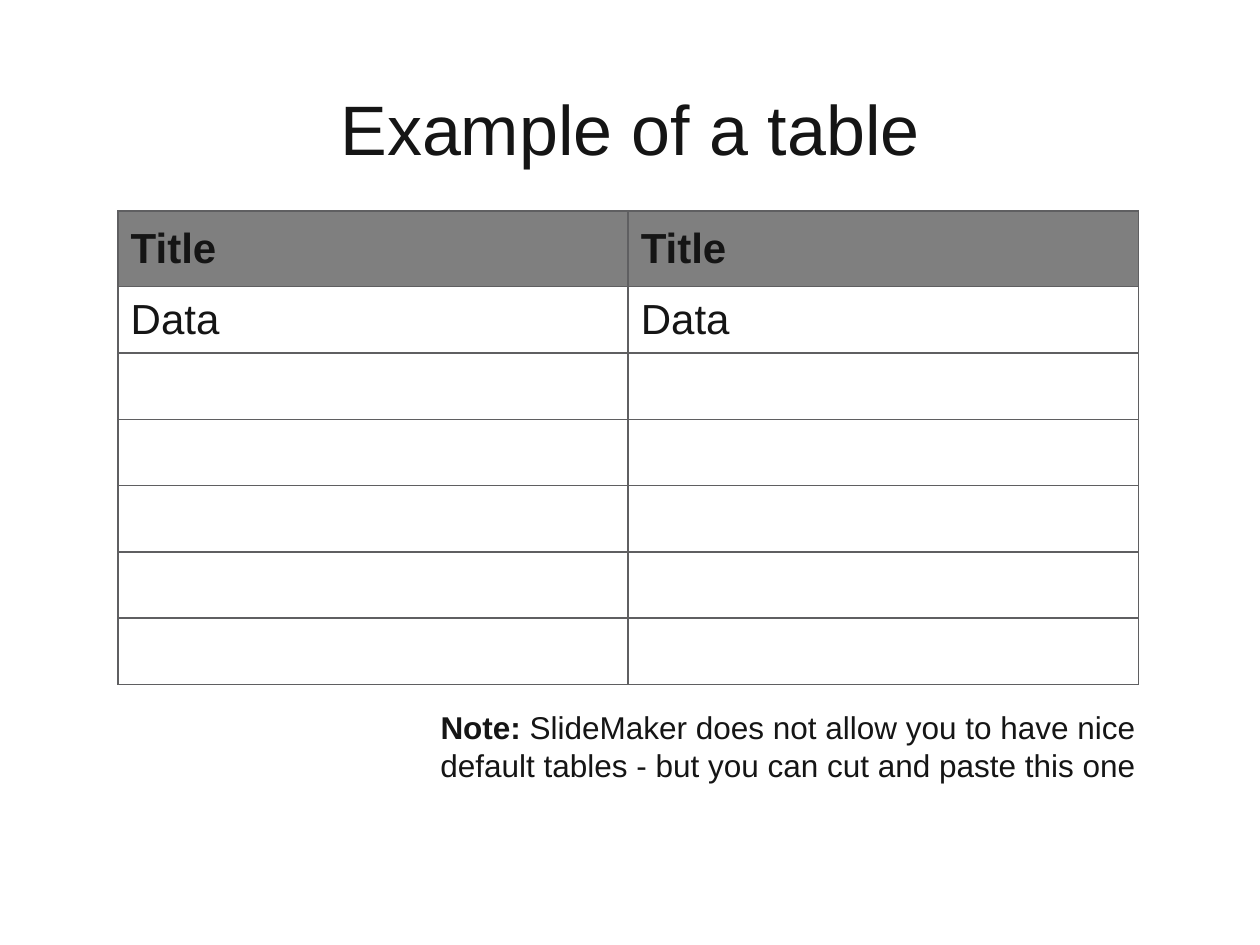
from dataclasses import dataclass

from lxml import etree
from pptx import Presentation
from pptx.dml.color import RGBColor
from pptx.enum import text as t
from pptx.oxml import ns
from pptx.util import Pt


@dataclass(frozen=True)
class Theme:
    font: str = "Arial"
    ink: str = "151515"
    header_fill: str = "7F7F7F"
    border: str = "5F5F61"
    border_width: float = 1
    title_size: float = 40
    table_size: float = 24
    note_size: float = 18


@dataclass(frozen=True)
class Box:
    left: float
    top: float
    width: float
    height: float

    def lengths(self) -> tuple:
        return Pt(self.left), Pt(self.top), Pt(self.width), Pt(self.height)


@dataclass(frozen=True)
class TableRow:
    labels: tuple
    height: float = 37.9
    header: bool = False


THEME = Theme()
TITLE_BOX = Box(36, 28, 648, 90)
TABLE_BOX = Box(67.5, 120.5, 583, 270.7)
NOTE_BOX = Box(196.5, 401, 459.5, 51)
COLUMN_COUNT = 2
EMPTY_ROW_COUNT = 5
ROWS = [
    TableRow(("Title", "Title"), height=43.3, header=True),
    TableRow(("Data", "Data")),
    *[TableRow(("", ""))] * EMPTY_ROW_COUNT,
]


def write(paragraph, wording: str, *, size: float, bold: bool = False, align=None) -> None:
    """Append a formatted run to the paragraph."""
    if align is not None:
        paragraph.alignment = align
    run = paragraph.add_run()
    run.text = wording
    run.font.name = THEME.font
    run.font.size = Pt(size)
    run.font.bold = bold
    run.font.color.rgb = RGBColor.from_string(THEME.ink)


def add_borders(cell) -> None:
    """Put the four side lines ahead of the fill, as the schema requires."""
    properties = cell._tc.get_or_add_tcPr()
    for position, side in enumerate(("lnL", "lnR", "lnT", "lnB")):
        line = etree.Element(ns.qn(f"a:{side}"), w=str(Pt(THEME.border_width)))
        fill = etree.SubElement(line, ns.qn("a:solidFill"))
        etree.SubElement(fill, ns.qn("a:srgbClr"), val=THEME.border)
        properties.insert(position, line)


def fill_cell(cell, label: str, header: bool) -> None:
    cell.vertical_anchor = t.MSO_ANCHOR.MIDDLE
    if header:
        cell.fill.solid()
        cell.fill.fore_color.rgb = RGBColor.from_string(THEME.header_fill)
    else:
        cell.fill.background()
    add_borders(cell)
    if label:
        write(cell.text_frame.paragraphs[0], label, size=THEME.table_size, bold=header)


def add_title(slide) -> None:
    title = slide.shapes.title
    title.left, title.top, title.width, title.height = TITLE_BOX.lengths()
    title.text_frame.vertical_anchor = t.MSO_ANCHOR.MIDDLE
    write(title.text_frame.paragraphs[0], "Example of a table",
          size=THEME.title_size, align=t.PP_ALIGN.CENTER)


def add_data_table(slide) -> None:
    table = slide.shapes.add_table(len(ROWS), COLUMN_COUNT, *TABLE_BOX.lengths()).table
    table.first_row = table.horz_banding = False
    for column in table.columns:
        column.width = Pt(TABLE_BOX.width / COLUMN_COUNT)
    for table_row, content in zip(table.rows, ROWS):
        table_row.height = Pt(content.height)
        for cell, label in zip(table_row.cells, content.labels):
            fill_cell(cell, label, content.header)


def add_note(slide) -> None:
    frame = slide.shapes.add_textbox(*NOTE_BOX.lengths()).text_frame
    frame.word_wrap = True
    frame.auto_size = t.MSO_AUTO_SIZE.SHAPE_TO_FIT_TEXT
    note = frame.paragraphs[0]
    write(note, "Note: ", size=THEME.note_size, bold=True, align=t.PP_ALIGN.RIGHT)
    write(note, "SlideMaker does not allow you to have nice default tables"
          " - but you can cut and paste this one", size=THEME.note_size)


def main() -> None:
    deck = Presentation()
    deck.slide_width, deck.slide_height = Pt(720), Pt(540)
    slide = deck.slides.add_slide(deck.slide_layouts.get_by_name("Title Only"))
    add_title(slide)
    add_data_table(slide)
    add_note(slide)
    deck.save("out.pptx")


if __name__ == "__main__":
    main()
